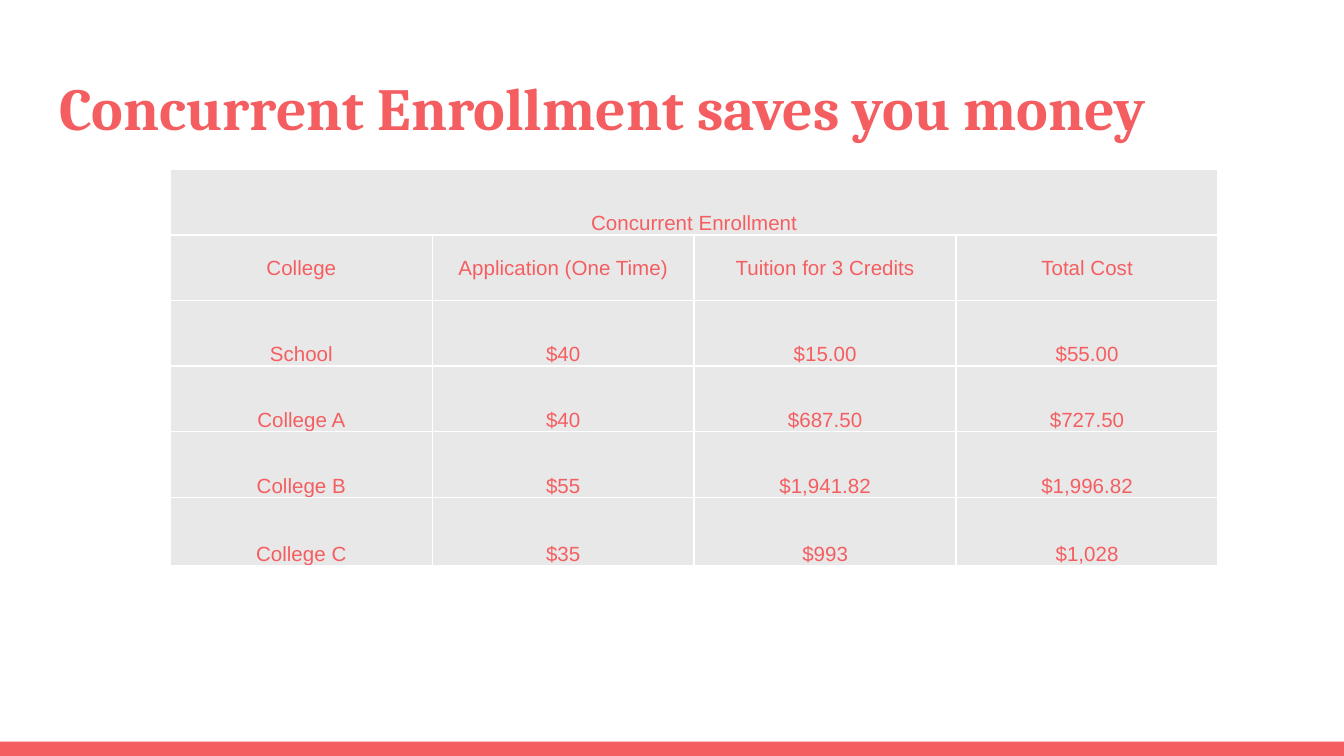
from pptx import Presentation
from pptx.dml.color import RGBColor
from pptx.enum.shapes import MSO_SHAPE
from pptx.enum.text import MSO_ANCHOR, PP_ALIGN
from pptx.oxml import parse_xml
from pptx.oxml.ns import nsdecls
from pptx.util import Cm, Pt

COLORS = {"coral": "F55E61", "cell": "E8E8E8", "border": "FFFFFF"}

COSTS = [
    ["College", "Application (One Time)", "Tuition for 3 Credits", "Total Cost"],
    ["School", "$40", "$15.00", "$55.00"],
    ["College A", "$40", "$687.50", "$727.50"],
    ["College B", "$55", "$1,941.82", "$1,996.82"],
    ["College C", "$35", "$993", "$1,028"],
]


class SlideBuilder:
    def __init__(self, slide):
        self.slide = slide

    def color(self, name):
        return RGBColor.from_string(COLORS[name])

    def style_font(self, paragraph, name, size, bold=False):
        font = paragraph.font
        font.name, font.size, font.bold = name, Pt(size), bold
        font.color.rgb = self.color("coral")

    def band(self, left, top, width, height):
        shape = self.slide.shapes.add_shape(
            MSO_SHAPE.RECTANGLE, Cm(left), Cm(top), Cm(width), Cm(height))
        shape.shadow.inherit = False
        shape.fill.solid()
        shape.fill.fore_color.rgb = self.color("coral")
        shape.line.fill.background()

    def title(self, text, left, top, width, height):
        title = self.slide.shapes.title
        title.left, title.top = Cm(left), Cm(top)
        title.width, title.height = Cm(width), Cm(height)
        frame = title.text_frame
        frame.text = text
        frame.word_wrap = True
        frame.vertical_anchor = MSO_ANCHOR.TOP
        frame.margin_left = frame.margin_right = Cm(0.25)
        frame.margin_top = frame.margin_bottom = Cm(0.25)
        paragraph = frame.paragraphs[0]
        paragraph.alignment = PP_ALIGN.LEFT
        self.style_font(paragraph, "Cambria", 32, bold=True)

    def table(self, heading, rows, left, top, column_width, row_heights):
        """Add a table whose heading spans all columns of the rows below it."""
        columns = len(rows[0])
        table = self.slide.shapes.add_table(
            len(row_heights), columns, Cm(left), Cm(top),
            Cm(column_width * columns), Cm(sum(row_heights))).table
        for column in table.columns:
            column.width = Cm(column_width)
        for row, height in zip(table.rows, row_heights):
            row.height = Cm(height)
        table.cell(0, 0).merge(table.cell(0, columns - 1))
        for row_index, texts in enumerate([[heading] + [""] * (columns - 1)] + rows):
            anchor = MSO_ANCHOR.MIDDLE if row_index == 1 else MSO_ANCHOR.BOTTOM
            for column_index, text in enumerate(texts):
                self.format_cell(table.cell(row_index, column_index), text, anchor)

    def format_cell(self, cell, text, anchor):
        cell.text = text
        cell.vertical_anchor = anchor
        cell.margin_left = cell.margin_right = cell.margin_top = Cm(0.03)
        cell.margin_bottom = 0
        paragraph = cell.text_frame.paragraphs[0]
        paragraph.alignment = PP_ALIGN.CENTER
        self.style_font(paragraph, "Arial", 11)
        properties = cell._tc.get_or_add_tcPr()
        for side in ("lnL", "lnR", "lnT", "lnB"):
            properties.append(parse_xml(
                f'<a:{side} {nsdecls("a")} w="{Pt(1)}"><a:solidFill>'
                f'<a:srgbClr val="{COLORS["border"]}"/></a:solidFill></a:{side}>'))
        cell.fill.solid()
        cell.fill.fore_color.rgb = self.color("cell")


def main():
    presentation = Presentation()
    presentation.slide_width, presentation.slide_height = Cm(25.4), Cm(14.29)
    builder = SlideBuilder(presentation.slides.add_slide(presentation.slide_layouts[5]))
    builder.band(0, 14.02, 25.4, 0.27)
    builder.title("Concurrent Enrollment saves you money", 0.87, 1.09, 23.67, 1.73)
    builder.table("Concurrent Enrollment", COSTS, 3.22, 3.2, 4.95, [1.24] * 5 + [1.3])
    presentation.save("out.pptx")


if __name__ == "__main__":
    main()
